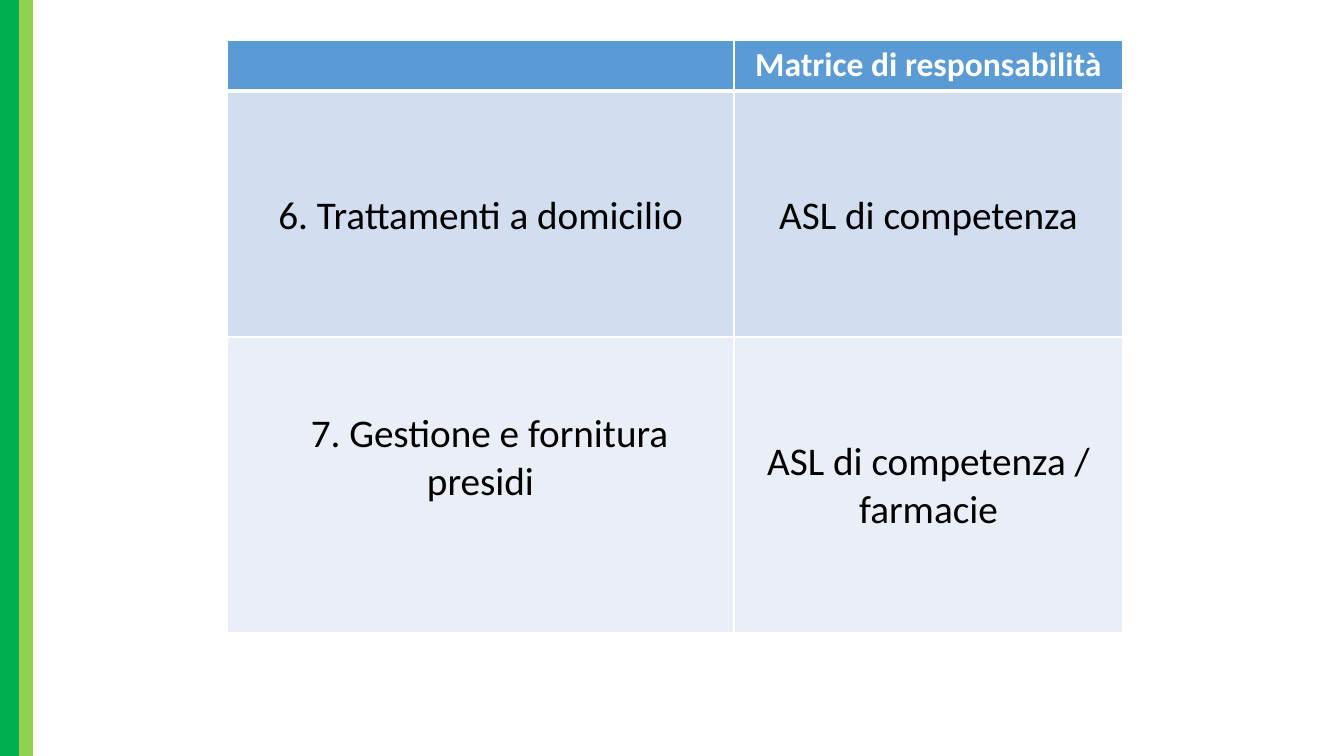
"""Build the responsibility matrix slide."""
import lxml.etree
import pptx
import pptx.dml.color
import pptx.enum.shapes
import pptx.enum.text
import pptx.oxml.ns
import pptx.util

WHITE = pptx.dml.color.RGBColor(0xFF, 0xFF, 0xFF)
BLACK = pptx.dml.color.RGBColor(0x00, 0x00, 0x00)
GREEN = pptx.dml.color.RGBColor(0x00, 0xB0, 0x50)
LIME = pptx.dml.color.RGBColor(0x92, 0xD0, 0x50)
HEADER_BLUE = pptx.dml.color.RGBColor(0x5B, 0x9B, 0xD5)
BAND_DARK = pptx.dml.color.RGBColor(0xD2, 0xDE, 0xEF)
BAND_LIGHT = pptx.dml.color.RGBColor(0xEA, 0xEF, 0xF7)


class SlideBuilder:
    font_name = "Calibri"
    emu_per_px = 12192000 / 1344

    def __init__(self, deck):
        self.page = deck.slides.add_slide(deck.slide_layouts[6])

    @classmethod
    def px(cls, length):
        return pptx.util.Emu(round(length * cls.emu_per_px))

    def bar(self, left, width, height, color):
        box = self.page.shapes.add_shape(
            pptx.enum.shapes.MSO_SHAPE.RECTANGLE,
            self.px(left), 0, self.px(width), self.px(height))
        box.shadow.inherit = False
        box.fill.solid()
        box.fill.fore_color.rgb = color
        box.line.fill.background()

    def table(self, left, top, widths, heights):
        frame = self.page.shapes.add_table(
            len(heights), len(widths), self.px(left), self.px(top),
            self.px(sum(widths)), self.px(sum(heights)))
        for column, width in zip(frame.table.columns, widths):
            column.width = self.px(width)
        for row, height in zip(frame.table.rows, heights):
            row.height = self.px(height)
        return frame.table

    def cell(self, cell, text, fill, color=BLACK, size=28, bold=False,
             margin_top=5, indent=0):
        cell.fill.solid()
        cell.fill.fore_color.rgb = fill
        cell.margin_top = self.px(margin_top)
        para = cell.text_frame.paragraphs[0]
        para.text = text
        para.alignment = pptx.enum.text.PP_ALIGN.CENTER
        if indent:
            properties = para._p.get_or_add_pPr()
            properties.set("marL", "0")
            properties.set("indent", str(self.px(indent)))
        para.font.name = self.font_name
        para.font.size = pptx.util.Pt(size)
        para.font.bold = bold
        para.font.color.rgb = color

    def borders(self, cell, top=1, bottom=1):
        qn = pptx.oxml.ns.qn
        properties = cell._tc.get_or_add_tcPr()
        sides = (("L", 1), ("R", 1), ("T", top), ("B", bottom))
        for position, (side, points) in enumerate(sides):
            line = lxml.etree.Element(qn(f"a:ln{side}"), w=str(pptx.util.Pt(points)))
            fill = lxml.etree.SubElement(line, qn("a:solidFill"))
            lxml.etree.SubElement(fill, qn("a:srgbClr"), val=str(WHITE))
            properties.insert(position, line)


def main():
    deck = pptx.Presentation()
    deck.slide_width = SlideBuilder.px(1344)
    deck.slide_height = SlideBuilder.px(756)
    builder = SlideBuilder(deck)
    builder.bar(0, 19, 756, GREEN)
    builder.bar(19, 14, 756, LIME)

    header = {"fill": HEADER_BLUE, "color": WHITE, "size": 24, "bold": True}
    treatments = {"fill": BAND_DARK, "margin_top": 101}
    supplies = {"fill": BAND_LIGHT, "margin_top": 101}
    rows = [
        [("", header), ("Matrice di responsabilità", header)],
        [("6. Trattamenti a domicilio", treatments),
         ("ASL di competenza", treatments)],
        [("7. Gestione e fornitura presidi",
          {**supplies, "margin_top": 73, "indent": 18}),
         ("ASL di competenza / farmacie", supplies)],
    ]
    matrix = builder.table(227, 40, [507, 389], [51, 246, 296])
    for row_index, row in enumerate(rows):
        for column_index, (text, style) in enumerate(row):
            cell = matrix.cell(row_index, column_index)
            builder.cell(cell, text, **style)
            builder.borders(cell, top=3 if row_index == 1 else 1,
                            bottom=3 if row_index == 0 else 1)
    deck.save("out.pptx")


if __name__ == "__main__":
    main()
